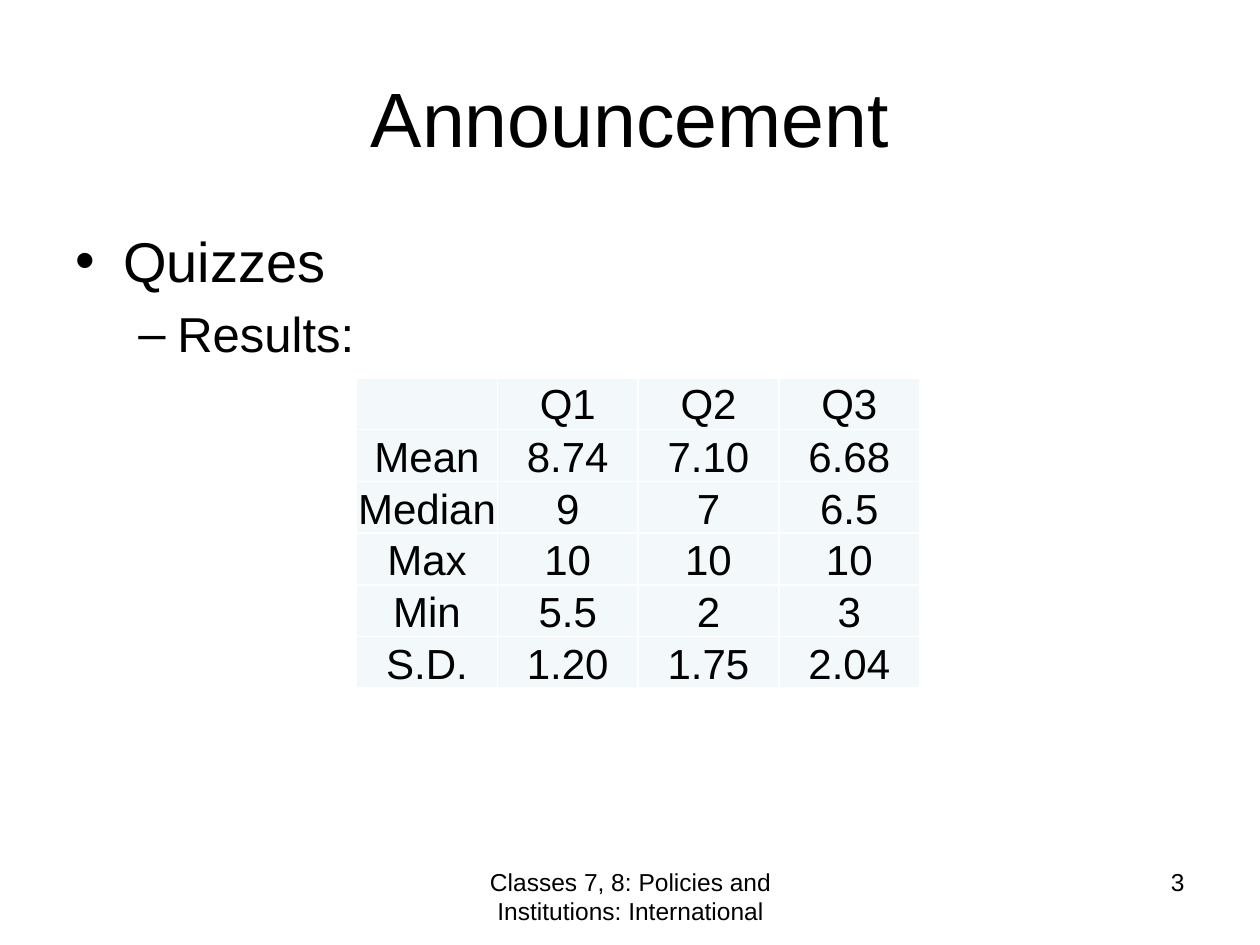
from lxml.etree import SubElement
from pptx import Presentation
from pptx.dml.color import RGBColor
from pptx.enum.text import MSO_ANCHOR as Anchor, PP_ALIGN as Align
from pptx.oxml.ns import qn
from pptx.util import Inches, Pt

BLACK = RGBColor(0x00, 0x00, 0x00)
PALE = RGBColor(0xF3, 0xF9, 0xFA)
CELL_FORMAT = {"margin_left": Inches(0.01), "margin_right": Inches(0.01),
               "margin_top": Inches(0.01), "margin_bottom": 0}


def write(para, text, size, align=Align.LEFT):
    para.alignment = align
    span = para.add_run()
    span.text = text
    for name, value in {"name": "Arial", "size": Pt(size)}.items():
        setattr(span.font, name, value)
    span.font.color.rgb = BLACK


def add_borders(cell):
    """Draw a thin white line on all four sides, ahead of the cell's fill."""
    props = cell._tc.get_or_add_tcPr()
    for position, side in enumerate(("a:lnL", "a:lnR", "a:lnT", "a:lnB")):
        line = SubElement(props, qn(side), w=str(Pt(1)))
        fill = SubElement(line, qn("a:solidFill"))
        SubElement(fill, qn("a:srgbClr"), val="FFFFFF")
        props.insert(position, line)


deck = Presentation()
deck.slide_width, deck.slide_height = Inches(10), Inches(7.5)
page = deck.slides.add_slide(deck.slide_layouts[5])

# Title
title = page.shapes.title
title.left, title.top = Inches(0.5), Inches(0.3)
title.width, title.height = Inches(9), Inches(1.25)
title.text_frame.vertical_anchor = Anchor.MIDDLE
write(title.text_frame.paragraphs[0], "Announcement", 44, Align.CENTER)

# Bulleted text
body = page.shapes.add_textbox(Inches(0.5), Inches(1.75), Inches(9), Inches(4.95))
frame = body.text_frame
frame.word_wrap = True
bullets = [("Quizzes", 32, "•", 0.38, -0.38), ("Results:", 28, "–", 0.81, -0.31)]
for level, (text, size, mark, margin, indent) in enumerate(bullets):
    para = frame.add_paragraph() if level else frame.paragraphs[0]
    para.level = level
    write(para, text, size)
    props = para._p.get_or_add_pPr()
    props.set("marL", str(Inches(margin)))
    props.set("indent", str(Inches(indent)))
    SubElement(SubElement(props, qn("a:spcBef")), qn("a:spcPct"), val="20000")
    SubElement(props, qn("a:buFont"), typeface="Arial")
    SubElement(props, qn("a:buChar"), char=mark)

# Footer and page number
for text, left, width, align in [
    ("Classes 7, 8: Policies and Institutions: International", 3.42, 3.17, Align.CENTER),
    ("3", 7.17, 2.33, Align.RIGHT),
]:
    box = page.shapes.add_textbox(Inches(left), Inches(6.83), Inches(width), Inches(0.52))
    box.text_frame.word_wrap = True
    write(box.text_frame.paragraphs[0], text, 14, align)

# Quiz results
results = [
    ("", "Q1", "Q2", "Q3"),
    ("Mean", "8.74", "7.10", "6.68"),
    ("Median", "9", "7", "6.5"),
    ("Max", "10", "10", "10"),
    ("Min", "5.5", "2", "3"),
    ("S.D.", "1.20", "1.75", "2.04"),
]
table = page.shapes.add_table(len(results), len(results[0]), Inches(2.83), Inches(3),
                              Inches(4.47), Inches(2.41)).table
for row, values in enumerate(results):
    for column, value in enumerate(values):
        cell = table.cell(row, column)
        for name, setting in CELL_FORMAT.items():
            setattr(cell, name, setting)
        cell.vertical_anchor = Anchor.BOTTOM if row else Anchor.MIDDLE
        cell.fill.solid()
        cell.fill.fore_color.rgb = PALE
        add_borders(cell)
        if value:
            write(cell.text_frame.paragraphs[0], value, 24, Align.CENTER)

deck.save("out.pptx")
